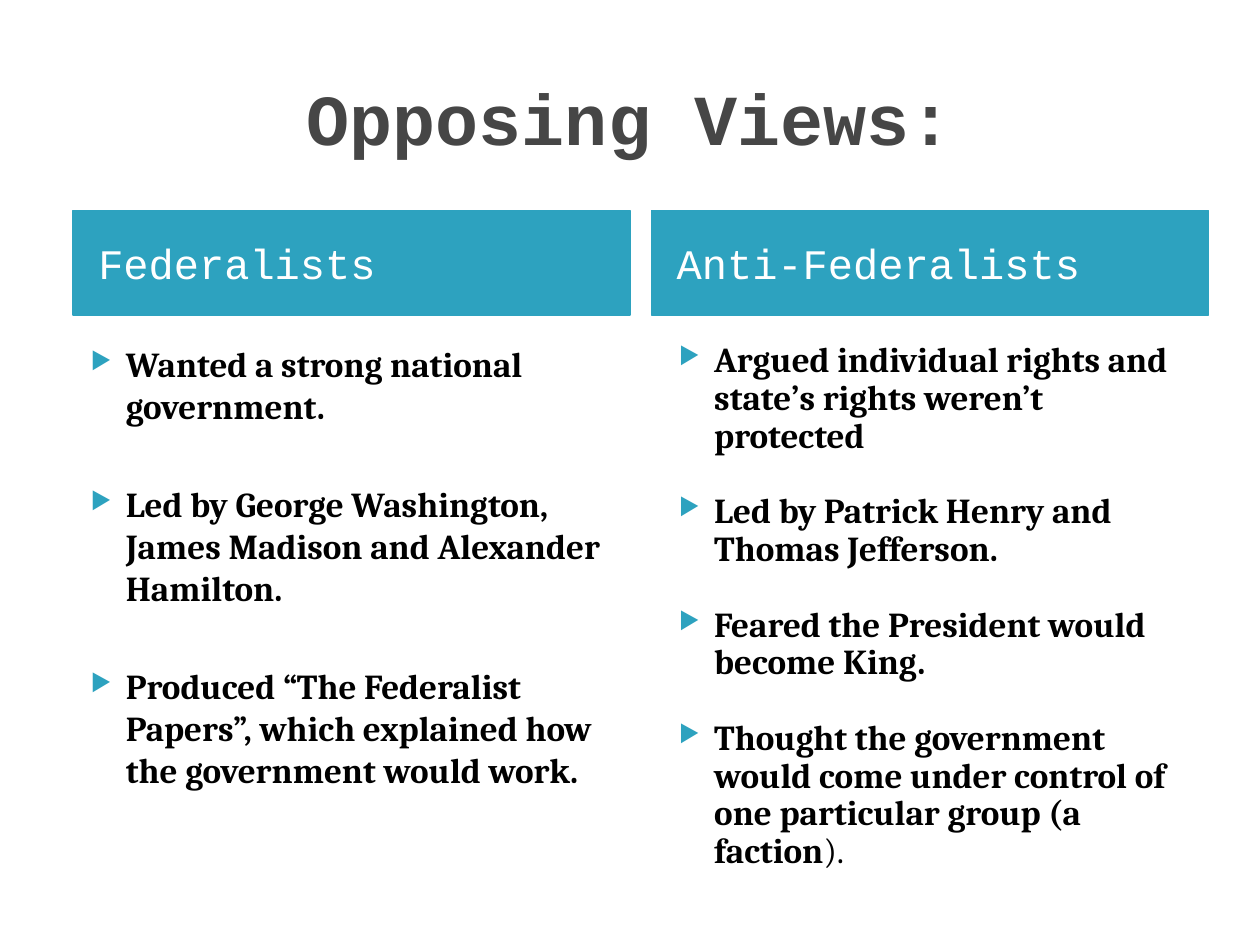
from lxml.etree import SubElement
from pptx import Presentation
from pptx.dml.color import RGBColor
from pptx.enum.shapes import MSO_SHAPE
from pptx.enum.text import MSO_ANCHOR, MSO_AUTO_SIZE, PP_ALIGN
from pptx.oxml.ns import qn
from pptx.util import Inches, Pt

LEFT_POINTS = [
    [("Wanted a strong national government.", True)],
    [("Led by George Washington, James Madison and Alexander Hamilton.", True)],
    [("Produced “The Federalist Papers”, which explained how the government would work.", True)],
]
RIGHT_POINTS = [
    [("Argued individual rights and state’s rights weren’t protected", True)],
    [("Led by Patrick Henry and Thomas Jefferson.", True)],
    [("Feared the President would become King.", True)],
    [("Thought the government would come under control of one particular group (a faction", True),
     (").", False)],
]


def rgb(value):
    return RGBColor.from_string(value)


def add_text(p, text, font="Cambria", size=20, color="000000", bold=False):
    r = p.add_run()
    r.text = text
    r.font.name = font
    r.font.size = Pt(size)
    r.font.color.rgb = rgb(color)
    r.font.bold = bold


class SlideBuilder:
    accent = "2DA2BF"
    heading_font = "Courier New"

    def __init__(self, s):
        self.s = s

    def title(self, text, left, top, width, height):
        sp = self.s.shapes.title
        sp.left, sp.top = Inches(left), Inches(top)
        sp.width, sp.height = Inches(width), Inches(height)
        tf = sp.text_frame
        tf.auto_size = MSO_AUTO_SIZE.NONE
        tf.vertical_anchor = MSO_ANCHOR.MIDDLE
        p = tf.paragraphs[0]
        p.alignment = PP_ALIGN.CENTER
        add_text(p, text, font=self.heading_font, size=41, color="464646", bold=True)

    def header(self, text, left, top, width, height):
        sp = self.s.shapes.add_shape(
            MSO_SHAPE.RECTANGLE, Inches(left), Inches(top), Inches(width), Inches(height))
        sp.shadow.inherit = False
        sp.fill.solid()
        sp.fill.fore_color.rgb = rgb(self.accent)
        sp.line.color.rgb = rgb(self.accent)
        sp.line.width = Pt(0.75)
        tf = sp.text_frame
        tf.word_wrap = True
        tf.margin_left = Inches(0.2)
        tf.vertical_anchor = MSO_ANCHOR.MIDDLE
        p = tf.paragraphs[0]
        p.alignment = PP_ALIGN.LEFT
        add_text(p, text, font=self.heading_font, size=24, color="FFFFFF")

    def bullet(self, p):
        pPr = p._p.get_or_add_pPr()
        pPr.set("marL", str(Inches(0.4)))
        pPr.set("indent", str(Inches(-0.28)))
        SubElement(SubElement(pPr, qn("a:buClr")), qn("a:srgbClr"), val=self.accent)
        SubElement(pPr, qn("a:buSzPct"), val="68000")
        SubElement(pPr, qn("a:buChar"), char="▶")

    def bullets(self, points, left, top, width, height, gap, spacing):
        sp = self.s.shapes.add_textbox(
            Inches(left), Inches(top), Inches(width), Inches(height))
        tf = sp.text_frame
        tf.word_wrap = True
        for i, runs in enumerate(points):
            p = tf.add_paragraph() if i else tf.paragraphs[0]
            self.bullet(p)
            p.line_spacing = spacing
            p.space_before = Pt(gap if i else 0)
            for text, bold in runs:
                add_text(p, text, bold=bold)


def main():
    prs = Presentation()
    prs.slide_width, prs.slide_height = Inches(10), Inches(7.5)
    s = SlideBuilder(prs.slides.add_slide(prs.slide_layouts[5]))
    s.title("Opposing Views:", 0.5, 0.3, 9, 1.25)
    s.header("Federalists", 0.58, 1.67, 4.42, 0.83)
    s.header("Anti-Federalists", 5.17, 1.67, 4.42, 0.83)
    s.bullets(LEFT_POINTS, 0.5, 2.67, 4.42, 4.31, gap=32, spacing=1.0)
    s.bullets(RIGHT_POINTS, 5.17, 2.67, 4.42, 4.31, gap=21.5, spacing=0.9)
    prs.save("out.pptx")


if __name__ == "__main__":
    main()
